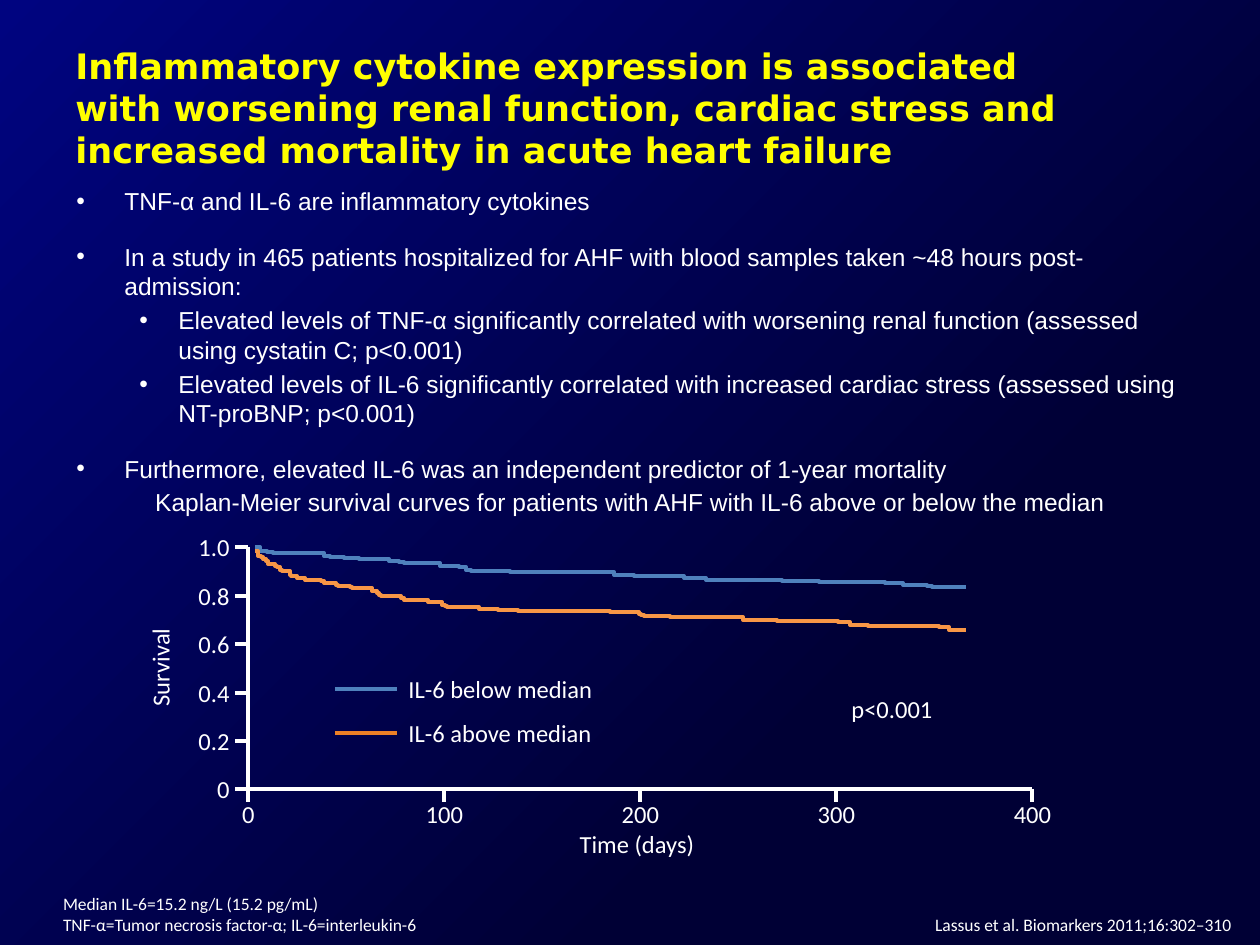
from lxml.etree import SubElement
from pptx import Presentation
from pptx.dml.color import RGBColor
from pptx.enum.shapes import MSO_CONNECTOR
from pptx.enum.text import MSO_ANCHOR, MSO_AUTO_SIZE, PP_ALIGN
from pptx.oxml.ns import qn
from pptx.util import Pt

SCALE = 914400 / 126
COLORS = {
    "night": "000035", "navy": "000480", "title": "FFFF00", "white": "FFFFFF",
    "below": "4F81BD", "above": "F79646", "above_key": "EC8026",
}
AXIS_LEFT, AXIS_TOP, AXIS_BOTTOM = 248, 547, 789
DAY_STEP, TICK = 196, 13
CURVE_START, CURVE_END = 255, 966

BULLETS = [
    (0, 12, "TNF-α and IL-6 are inflammatory cytokines"),
    (0, 0, "In a study in 465 patients hospitalized for AHF with blood samples "
           "taken ~48 hours post-admission:"),
    (1, 0, "Elevated levels of TNF-α significantly correlated with worsening "
           "renal function (assessed using cystatin C; p<0.001)"),
    (1, 12, "Elevated levels of IL-6 significantly correlated with increased "
            "cardiac stress (assessed using\vNT-proBNP; p<0.001)"),
    (0, 12, "Furthermore, elevated IL-6 was an independent predictor of 1-year mortality"),
]
INDENTS = [(48, 48), (102, 39)]

BELOW_STEPS = [
    (260, 551), (267, 552), (273, 553), (324, 556), (330, 557), (344, 558),
    (359, 559), (389, 561), (399, 562), (404, 563), (440, 566), (459, 567),
    (466, 570), (471, 571), (510, 572), (614, 575), (634, 576), (684, 578),
    (706, 580), (782, 581), (819, 582), (885, 583), (903, 585), (927, 586),
    (932, 587),
]
ABOVE_STEPS = [
    (258, 556), (261, 557), (263, 559), (266, 561), (268, 564), (275, 566),
    (277, 567), (280, 570), (282, 571), (290, 575), (291, 576), (297, 578),
    (305, 580), (321, 581), (324, 583), (336, 585), (338, 586), (350, 587),
    (352, 588), (372, 591), (377, 593), (379, 595), (381, 596), (401, 598),
    (404, 600), (428, 602), (442, 605), (445, 606), (447, 607), (479, 609),
    (498, 610), (518, 611), (610, 612), (639, 614), (641, 615), (644, 616),
    (670, 617), (743, 620), (777, 621), (838, 622), (850, 625), (868, 626),
    (939, 627), (949, 630),
]


def px(length):
    return round(length * SCALE)


def color(name):
    return RGBColor.from_string(COLORS[name])


def paint_background(page):
    fill = page.background.fill
    fill.gradient()
    fill.gradient_angle = 315
    for stop, name, position in zip(fill.gradient_stops, ("navy", "night"), (0, 0.7)):
        stop.color.rgb = color(name)
        stop.position = position


def add_text(page, text, place, size=14, font="Calibri", ink="white",
             bold=False, align=PP_ALIGN.LEFT, wrap=True):
    box = page.shapes.add_textbox(*map(px, place))
    frame = box.text_frame
    frame.text = text
    frame.word_wrap = wrap
    for paragraph in frame.paragraphs:
        paragraph.alignment = align
        for span in paragraph.runs:
            span.font.size = Pt(size)
            span.font.name = font
            span.font.bold = bold
            span.font.color.rgb = color(ink)
    return box


def add_label(page, text, place, **style):
    box = add_text(page, text, place, **style)
    box.text_frame.auto_size = MSO_AUTO_SIZE.SHAPE_TO_FIT_TEXT
    return box


def add_footer(page, text, place, align=PP_ALIGN.LEFT):
    frame = add_text(page, text, place, size=10, align=align).text_frame
    frame.vertical_anchor = MSO_ANCHOR.BOTTOM
    frame.margin_left = frame.margin_right = frame.margin_top = frame.margin_bottom = 0


def add_bullets(page):
    text = "\n".join(bullet[2] for bullet in BULLETS)
    box = add_text(page, text, (64, 180, 1129, 272), font="Arial")
    for index, (paragraph, (level, after, _)) in enumerate(
            zip(box.text_frame.paragraphs, BULLETS)):
        margin, hanging = INDENTS[level]
        properties = paragraph._p.get_or_add_pPr()
        properties.set("marL", str(px(margin)))
        properties.set("indent", str(-px(hanging)))
        SubElement(properties, qn("a:buFont"), typeface="Arial")
        SubElement(properties, qn("a:buChar"), char="•")
        paragraph.level = level
        paragraph.space_before = Pt(2.8 if index else 0)
        paragraph.space_after = Pt(after)


def add_line(page, start, end, ink="white"):
    line = page.shapes.add_connector(MSO_CONNECTOR.STRAIGHT, *map(px, start + end))
    line.line.color.rgb = color(ink)
    line.line.width = Pt(2.25)
    SubElement(line._element.spPr, qn("a:effectLst"))


def add_path(page, points, ink):
    builder = page.shapes.build_freeform(*points[0], scale=SCALE)
    builder.add_line_segments(points[1:], close=False)
    path = builder.convert_to_shape()
    path.shadow.inherit = False
    path.fill.background()
    path.line.color.rgb = color(ink)
    path.line.width = Pt(2.25)


def add_curve(page, top, steps, ink):
    points = [(CURVE_START, top)]
    for x, y in steps:
        points += [(x, points[-1][1]), (x, y)]
    points.append((CURVE_END, points[-1][1]))
    add_path(page, points, ink)


def add_axes(page):
    days = [AXIS_LEFT + DAY_STEP * index for index in range(5)]
    add_path(page, [(AXIS_LEFT, AXIS_TOP), (AXIS_LEFT, AXIS_BOTTOM),
                    (days[-1], AXIS_BOTTOM)], "white")
    for x in days:
        add_line(page, (x, AXIS_BOTTOM), (x, AXIS_BOTTOM + TICK))
    for index, text in enumerate(["0", "0.2", "0.4", "0.6", "0.8", "1.0"]):
        y = AXIS_BOTTOM - (AXIS_BOTTOM - AXIS_TOP) * index // 5
        add_line(page, (AXIS_LEFT, y), (AXIS_LEFT - TICK, y))
        width = 57 if index else 39
        add_label(page, text, (242 - width, y - 21, width, 43),
                  align=PP_ALIGN.RIGHT, wrap=False)
    box = add_label(page, "\t0\t100\t200\t300\t400", (223, 793, 890, 43))
    tabs = SubElement(box.text_frame.paragraphs[0]._p.get_or_add_pPr(), qn("a:tabLst"))
    for x in days:
        SubElement(tabs, qn("a:tab"), pos=str(px(x - 235)), algn="ctr")
    add_label(page, "Time (days)", (233, 823, 808, 43), align=PP_ALIGN.CENTER)
    name = add_label(page, "Survival", (108, 646, 105, 43),
                     align=PP_ALIGN.CENTER, wrap=False)
    name.rotation = 270


def add_key(page, text, y, ink):
    add_line(page, (335, y), (397, y), ink)
    add_label(page, text, (396, y - 21, 210, 43), wrap=False)


def main():
    deck = Presentation()
    deck.slide_width, deck.slide_height = px(1260), px(945)
    page = deck.slides.add_slide(deck.slide_layouts[6])
    paint_background(page)
    add_text(page, "Inflammatory cytokine expression is associated with worsening renal "
             "function, cardiac stress and increased mortality in acute heart failure",
             (63, 38, 1022, 158), size=20, font="DejaVu Sans", ink="title", bold=True)
    add_bullets(page)
    add_label(page, "Kaplan-Meier survival curves for patients with AHF with IL-6 above "
              "or below the median", (134, 481, 993, 43), font="Arial",
              align=PP_ALIGN.CENTER)
    add_axes(page)
    add_curve(page, 547, BELOW_STEPS, "below")
    add_curve(page, 551, ABOVE_STEPS, "above")
    add_key(page, "IL-6 below median", 689, "below")
    add_key(page, "IL-6 above median", 733, "above_key")
    add_label(page, "p<0.001", (839, 688, 107, 43), wrap=False)
    add_footer(page, "Median IL-6=15.2 ng/L (15.2 pg/mL)\n"
               "TNF-α=Tumor necrosis factor-α; IL-6=interleukin-6", (63, 891, 382, 44))
    add_footer(page, "Lassus et al. Biomarkers 2011;16:302–310", (908, 891, 323, 44),
               PP_ALIGN.RIGHT)
    deck.save("out.pptx")


if __name__ == "__main__":
    main()
